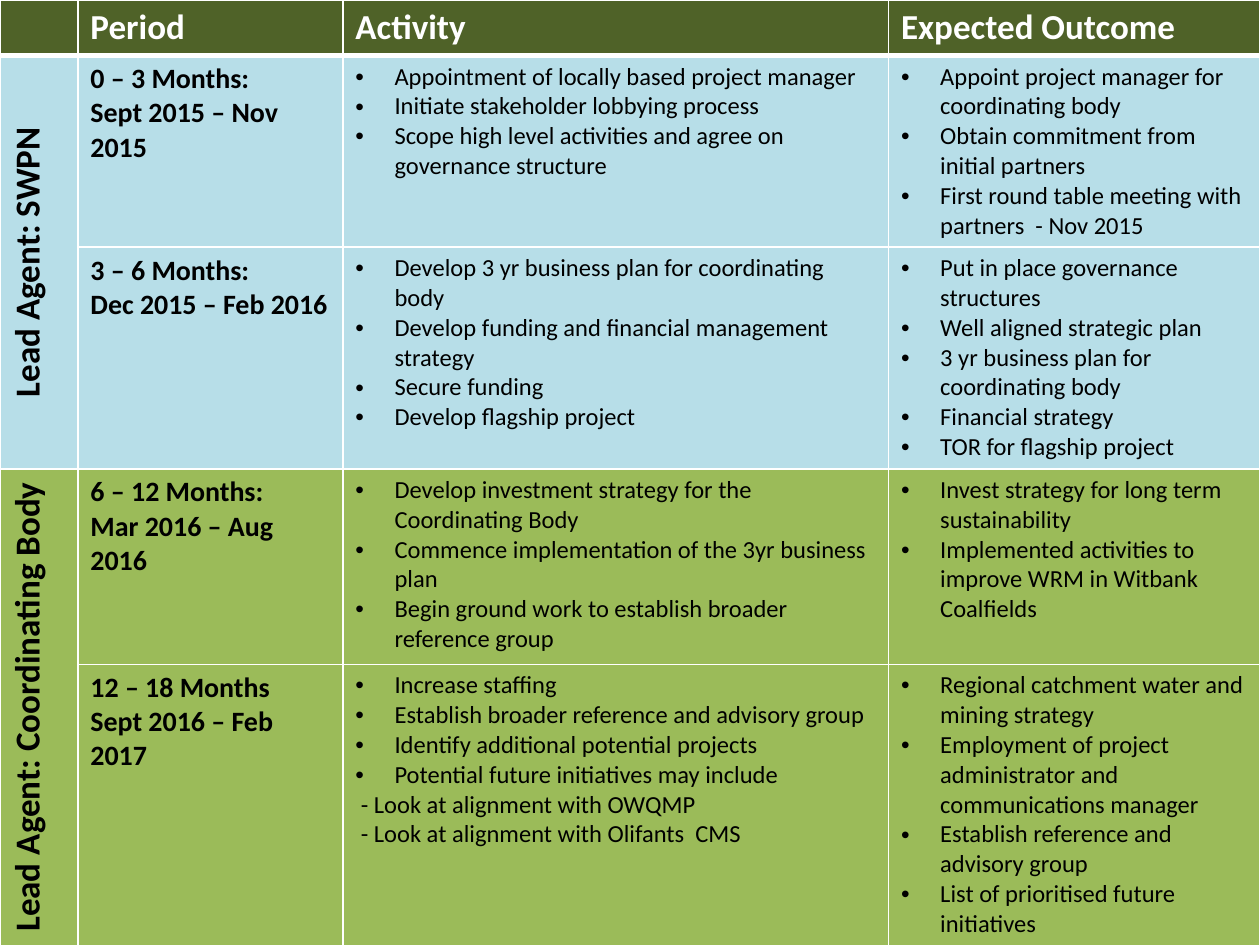
"""Build a one-slide project plan table with lead agents, periods, activities and outcomes."""
from dataclasses import dataclass

from lxml import etree
from pptx import Presentation
from pptx.dml.color import RGBColor
from pptx.enum.text import PP_ALIGN
from pptx.oxml.ns import qn
from pptx.util import Cm, Pt

CENTER = PP_ALIGN.CENTER
LEFT = PP_ALIGN.LEFT


@dataclass(frozen=True)
class Theme:
    font: str = "Calibri"
    header: str = "4F6228"
    blue: str = "B7DEE8"
    green: str = "9BBB59"
    white: str = "FFFFFF"
    black: str = "000000"
    head_size: int = 20
    period_size: int = 16
    body_size: int = 14
    line: float = 1
    heavy_line: float = 3


@dataclass(frozen=True)
class Phase:
    period: list[str]
    activities: list[str]
    outcomes: list[str]
    notes: tuple[str, ...] = ()


@dataclass(frozen=True)
class Stage:
    agent: str
    fill: str
    phases: list[Phase]


THEME = Theme()
COLS = (1.57, 5.34, 11.0, 7.49)
ROWS = (1.12, 3.61, 4.47, 3.94, 5.61)
HEADERS = ("", "Period", "Activity", "Expected Outcome")
BULLET_INDENT = Cm(0.79)
NOTE_INDENT = Cm(0.11)

HEAD = {"name": THEME.font, "size": Pt(THEME.head_size), "bold": True}
PERIOD = {"name": THEME.font, "size": Pt(THEME.period_size), "bold": True}
BODY = {"name": THEME.font, "size": Pt(THEME.body_size), "bold": False}

STAGES = [
    Stage("Lead Agent: SWPN", THEME.blue, [
        Phase(
            ["0 – 3 Months:", "Sept 2015 – Nov 2015"],
            ["Appointment of locally based project manager",
             "Initiate stakeholder lobbying process",
             "Scope high level activities and agree on governance structure"],
            ["Appoint project manager for coordinating body",
             "Obtain commitment from initial partners",
             "First round table meeting with partners  - Nov 2015"]),
        Phase(
            ["3 – 6 Months:", "Dec 2015 – Feb 2016"],
            ["Develop 3 yr business plan for coordinating body",
             "Develop funding and financial management strategy",
             "Secure funding",
             "Develop flagship project"],
            ["Put in place governance structures",
             "Well aligned strategic plan",
             "3 yr business plan for coordinating body",
             "Financial strategy",
             "TOR for flagship project"]),
    ]),
    Stage("Lead Agent: Coordinating Body", THEME.green, [
        Phase(
            ["6 – 12 Months:", "Mar 2016 – Aug 2016"],
            ["Develop investment strategy for the Coordinating Body",
             "Commence implementation of the 3yr business plan",
             "Begin ground work to establish broader reference group"],
            ["Invest strategy for long term sustainability",
             "Implemented activities to improve WRM in Witbank Coalfields"]),
        Phase(
            ["12 – 18 Months", "Sept 2016 – Feb 2017"],
            ["Increase staffing",
             "Establish broader reference and advisory group",
             "Identify additional potential projects",
             "Potential future initiatives may include"],
            ["Regional catchment water and mining strategy",
             "Employment of project administrator and communications manager",
             "Establish reference and advisory group",
             "List of prioritised future initiatives"],
            ("- Look at alignment with OWQMP",
             "- Look at alignment with Olifants  CMS")),
    ]),
]


def set_indent(p, left: int, bullet: bool) -> None:
    """Indent a paragraph, hanging it from a bullet if asked."""
    pPr = p._p.get_or_add_pPr()
    pPr.set("marL", str(int(left)))
    pPr.set("indent", str(-int(left) if bullet else 0))
    if bullet:
        etree.SubElement(pPr, qn("a:buFont"), typeface="Arial")
        etree.SubElement(pPr, qn("a:buChar"), char="•")


def write(cell, lines, fmt: dict, color: str = THEME.black, align=LEFT,
          indent: int = 0, bullet: bool = False) -> None:
    """Append formatted paragraphs to a cell."""
    tf = cell.text_frame
    for line in lines:
        p = tf.add_paragraph() if tf.text else tf.paragraphs[0]
        p.alignment = align
        if indent:
            set_indent(p, indent, bullet)
        r = p.add_run()
        r.text = line
        for name, value in fmt.items():
            setattr(r.font, name, value)
        r.font.color.rgb = RGBColor.from_string(color)


def style_cell(cell, fill: str, top: float, bottom: float) -> None:
    """Fill a cell and draw its white borders."""
    cell.fill.solid()
    cell.fill.fore_color.rgb = RGBColor.from_string(fill)
    tcPr = cell._tc.get_or_add_tcPr()
    widths = {"a:lnL": THEME.line, "a:lnR": THEME.line, "a:lnT": top, "a:lnB": bottom}
    for i, (tag, width) in enumerate(widths.items()):
        ln = etree.Element(qn(tag), w=str(int(Pt(width))))
        solid = etree.SubElement(ln, qn("a:solidFill"))
        etree.SubElement(solid, qn("a:srgbClr"), val=THEME.white)
        tcPr.insert(i, ln)


def draw_header(table) -> None:
    """Write the heading row."""
    for cell, text in zip(table.rows[0].cells, HEADERS):
        style_cell(cell, THEME.header, THEME.line, THEME.heavy_line)
        if text:
            write(cell, [text], HEAD, THEME.white)


def draw_stage(table, first: int, stage: Stage) -> None:
    """Write one lead agent's rows, starting at the given row."""
    for row, phase in enumerate(stage.phases, first):
        top = THEME.heavy_line if row == 1 else THEME.line
        for cell in table.rows[row].cells:
            style_cell(cell, stage.fill, top, THEME.line)
        _, period, activity, outcome = table.rows[row].cells
        write(period, phase.period, PERIOD)
        write(activity, phase.activities, BODY, indent=BULLET_INDENT, bullet=True)
        write(activity, phase.notes, BODY, indent=NOTE_INDENT)
        write(outcome, phase.outcomes, BODY, indent=BULLET_INDENT, bullet=True)
    agent = table.cell(first, 0)
    agent.merge(table.cell(first + len(stage.phases) - 1, 0))
    agent._tc.get_or_add_tcPr().set("vert", "vert270")
    write(agent, [stage.agent], HEAD, align=CENTER)


def main() -> None:
    """Build and save the slide."""
    prs = Presentation()
    prs.slide_width, prs.slide_height = Cm(25.4), Cm(19.05)
    s = prs.slides.add_slide(prs.slide_layouts[6])
    table = s.shapes.add_table(len(ROWS), len(COLS), Cm(0), Cm(0),
                               Cm(sum(COLS)), Cm(sum(ROWS))).table
    for column, width in zip(table.columns, COLS):
        column.width = Cm(width)
    for row, height in zip(table.rows, ROWS):
        row.height = Cm(height)
    draw_header(table)
    first = 1
    for stage in STAGES:
        draw_stage(table, first, stage)
        first += len(stage.phases)
    prs.save("out.pptx")


if __name__ == "__main__":
    main()
